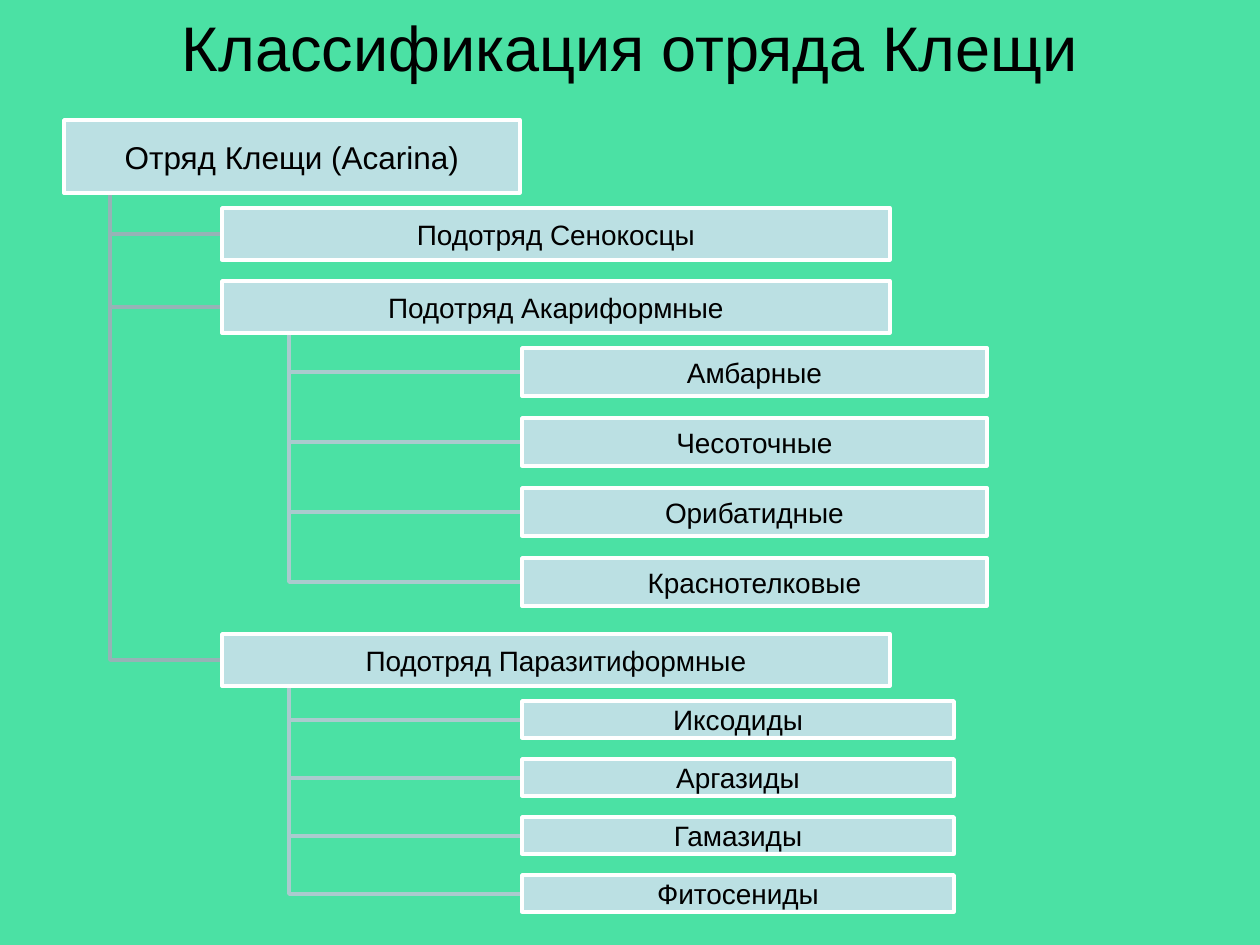
"""Build a slide with the classification tree of the order of mites."""
import collections

import pptx
import pptx.dml.color
import pptx.enum.shapes
import pptx.enum.text
import pptx.util

RGBColor = pptx.dml.color.RGBColor
GREEN = RGBColor(0x4B, 0xE1, 0xA4)
PALE_BLUE = RGBColor(0xBB, 0xE0, 0xE3)
WHITE = RGBColor(0xFF, 0xFF, 0xFF)
BLACK = RGBColor(0x00, 0x00, 0x00)
DARK_BRANCH = RGBColor(0x96, 0xB3, 0xB6)
LIGHT_BRANCH = RGBColor(0xAA, 0xCB, 0xCE)

EMU_PER_PX = 914400 / 126
Node = collections.namedtuple("Node", "label left top width height")

ORDER = Node("Отряд Клещи (Acarina)", 64, 120, 456, 73)
SUBORDERS = [
    Node(label, 222, top, 668, 52)
    for label, top in (
        ("Подотряд Сенокосцы", 208),
        ("Подотряд Акариформные", 281),
        ("Подотряд Паразитиформные", 634),
    )
]
ACARIFORMES = ["Амбарные", "Чесоточные", "Орибатидные", "Краснотелковые"]
PARASITIFORMES = ["Иксодиды", "Аргазиды", "Гамазиды", "Фитосениды"]


def px(value):
    """Turn pixels into EMU."""
    return pptx.util.Emu(round(value * EMU_PER_PX))


def set_values(target, values):
    """Set each named attribute of the target."""
    for name, value in values.items():
        setattr(target, name, value)


def write_text(shape, text, size, inset):
    """Write one centred line of black text in a shape."""
    frame = shape.text_frame
    set_values(frame, {
        "word_wrap": True,
        "vertical_anchor": pptx.enum.text.MSO_ANCHOR.MIDDLE,
        "margin_left": px(inset),
        "margin_right": px(inset),
        "margin_top": px(inset),
        "margin_bottom": px(inset),
    })
    para = frame.paragraphs[0]
    para.alignment = pptx.enum.text.PP_ALIGN.CENTER
    span = para.add_run()
    span.text = text
    set_values(span.font, {"name": "Arial", "size": pptx.util.Pt(size)})
    span.font.color.rgb = BLACK


def style_line(shape, color):
    """Give a shape a plain line of two points and no shadow."""
    shape.shadow.inherit = False
    shape.line.color.rgb = color
    shape.line.width = pptx.util.Pt(2)


def add_title(page, text):
    """Add the slide title."""
    box = page.shapes.add_textbox(px(63), px(6), px(1134), px(80))
    write_text(box, text, 36, 6)


def add_node(page, node, size):
    """Add the box of one tree node."""
    box = page.shapes.add_shape(
        pptx.enum.shapes.MSO_SHAPE.RECTANGLE,
        px(node.left), px(node.top), px(node.width), px(node.height))
    box.fill.solid()
    box.fill.fore_color.rgb = PALE_BLUE
    style_line(box, WHITE)
    write_text(box, node.label, size, 1)


def add_branch(page, parent, child, color):
    """Add the bent line from a parent's lower edge to a child's left side."""
    trunk = parent.left + parent.width / 10
    middle = child.top + child.height / 2
    builder = page.shapes.build_freeform(
        trunk, parent.top + parent.height, scale=EMU_PER_PX)
    builder.add_line_segments(
        [(trunk, middle), (child.left, middle)], close=False)
    branch = builder.convert_to_shape()
    branch.fill.background()
    style_line(branch, color)


def stack(labels, top, step, width, height):
    """Lay out the groups of one suborder at equal steps."""
    return [Node(label, 522, top + step * row, width, height)
            for row, label in enumerate(labels)]


def main():
    """Build and save the slide."""
    deck = pptx.Presentation()
    set_values(deck, {"slide_width": px(1260), "slide_height": px(945)})
    page = deck.slides.add_slide(deck.slide_layouts[6])
    page.background.fill.solid()
    page.background.fill.fore_color.rgb = GREEN
    add_title(page, "Классификация отряда Клещи")

    acariformes = stack(ACARIFORMES, 348, 70, 465, 48)
    parasitiformes = stack(PARASITIFORMES, 701, 58, 432, 37)
    families = (
        (ORDER, SUBORDERS, DARK_BRANCH),
        (SUBORDERS[1], acariformes, LIGHT_BRANCH),
        (SUBORDERS[2], parasitiformes, LIGHT_BRANCH),
    )
    for parent, children, color in families:
        for child in reversed(children):
            add_branch(page, parent, child, color)

    add_node(page, ORDER, 18)
    for node in SUBORDERS + acariformes + parasitiformes:
        add_node(page, node, 16)
    deck.save("out.pptx")


if __name__ == "__main__":
    main()
